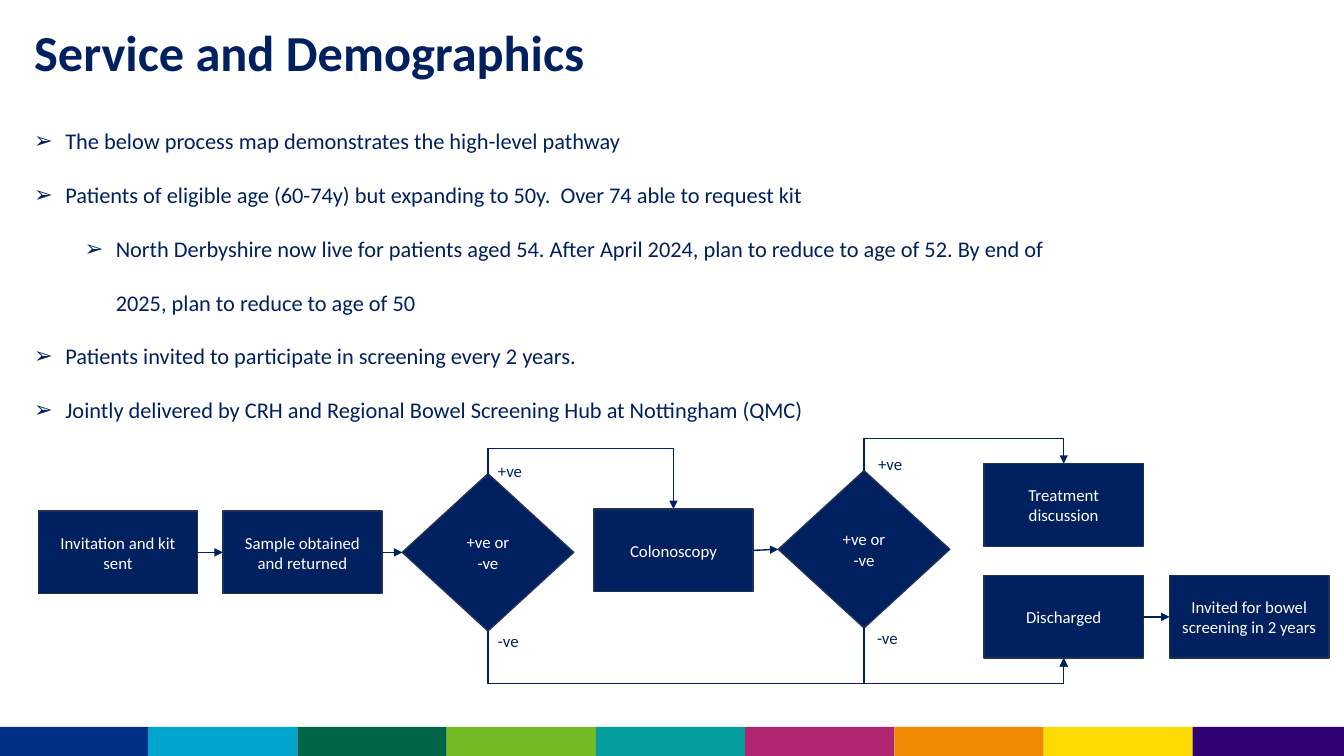
import pptx
import pptx.util
from lxml import etree
from pptx.dml.color import RGBColor
from pptx.enum.shapes import MSO_CONNECTOR, MSO_SHAPE
from pptx.enum.text import MSO_ANCHOR, PP_ALIGN
from pptx.oxml.ns import qn

Inches = pptx.util.Inches
WIDTH, HEIGHT = 13.33, 7.5
FONT = "Calibri"
NAVY = RGBColor(0x00, 0x20, 0x60)
OUTLINE = RGBColor(0x1E, 0x32, 0x56)
WHITE = RGBColor(0xFF, 0xFF, 0xFF)
BAND_COLOURS = [RGBColor.from_string(code) for code in (
    "002F87", "00A5CD", "006448", "74BA23", "049E9E",
    "B02673", "F08A03", "FEDB04", "2F0070")]
TOP, LEFT, BOTTOM, RIGHT = range(4)  # connection sites of a box or diamond

BULLETS = [
    (0, "The below process map demonstrates the high-level pathway"),
    (0, "Patients of eligible age (60-74y) but expanding to 50y.\u00a0 Over 74 able to request kit"),
    (1, "North Derbyshire now live for patients aged 54. After April 2024, plan to reduce "
        "to age of 52. By end of 2025, plan to reduce to age of 50"),
    (0, "Patients invited to participate in screening every 2 years."),
    (0, "Jointly delivered by CRH and Regional Bowel Screening Hub at Nottingham (QMC)"),
]

STEP_SIZE, DECISION_SIZE = (1.58, 0.82), (1.7, 1.56)
# name: (text, left edge, vertical centre, is a decision), within the flow region
STEPS = {
    "invite": ("Invitation and kit sent", 0, 1.13, False),
    "sample": ("Sample obtained and returned", 1.83, 1.13, False),
    "kit result": ("+ve or -ve", 3.61, 1.13, True),
    "colonoscopy": ("Colonoscopy", 5.51, 1.11, False),
    "scope result": ("+ve or -ve", 7.34, 1.1, True),
    "treatment": ("Treatment discussion", 9.38, 0.66, False),
    "discharged": ("Discharged", 9.38, 1.77, False),
    "reinvite": ("Invited for bowel screening in 2 years", 11.22, 1.77, False),
}
ARROWS = [("invite", "sample"), ("sample", "kit result"),
          ("colonoscopy", "scope result"), ("discharged", "reinvite")]
# start, end, side of both, height of the lane within the flow region
ELBOWS = [("kit result", "discharged", BOTTOM, 2.43),
          ("kit result", "colonoscopy", TOP, 0.1),
          ("scope result", "treatment", TOP, 0),
          ("scope result", "discharged", BOTTOM, 2.43)]
BRANCH_LABELS = [("+ve", 4.46, -0.03), ("+ve", 8.23, -0.1),
                 ("-ve", 8.22, 1.63), ("-ve", 4.46, 1.66)]


def format_runs(paragraph, size, colour, bold=False):
    for run in paragraph.runs:
        run.font.name = FONT
        run.font.size = pptx.util.Pt(size)
        run.font.color.rgb = colour
        run.font.bold = bold


def add_text(slide, box, text, size, bold=False, spacing=1.0, wrap=True):
    frame = slide.shapes.add_textbox(*map(Inches, box)).text_frame
    frame.word_wrap = wrap
    frame.text = text
    for paragraph in frame.paragraphs:
        paragraph.line_spacing = spacing
        format_runs(paragraph, size, NAVY, bold)
    return frame


def add_bullets(slide, box):
    frame = add_text(slide, box, "\n".join(text for _, text in BULLETS), 16, spacing=2.0)
    for paragraph, (level, _) in zip(frame.paragraphs, BULLETS):
        paragraph.level = level
        properties = paragraph._p.get_or_add_pPr()
        properties.set("marL", str(Inches(0.31 + 0.5 * level)))
        properties.set("indent", str(Inches(-0.31)))
        etree.SubElement(properties, qn("a:buFont")).set("typeface", "Arial")
        etree.SubElement(properties, qn("a:buChar")).set("char", "➢")


def add_colour_strip(slide, box):
    left, top, width, height = box
    edges = [left] + [left + 1.47 + 1.48 * i for i in range(8)] + [left + width]
    for colour, start, end in zip(BAND_COLOURS, edges, edges[1:]):
        band = slide.shapes.add_shape(MSO_SHAPE.RECTANGLE,
                                      *map(Inches, (start, top, end - start, height)))
        band.shadow.inherit = False
        band.fill.solid()
        band.fill.fore_color.rgb = colour
        band.line.fill.background()


def add_step(slide, left, middle, text, is_decision):
    width, height = DECISION_SIZE if is_decision else STEP_SIZE
    kind = MSO_SHAPE.DIAMOND if is_decision else MSO_SHAPE.RECTANGLE
    step = slide.shapes.add_shape(
        kind, *map(Inches, (left, middle - height / 2, width, height)))
    step.shadow.inherit = False
    step.fill.solid()
    step.fill.fore_color.rgb = NAVY
    step.line.color.rgb = OUTLINE
    step.line.width = pptx.util.Pt(1)
    frame = step.text_frame
    frame.word_wrap = True
    frame.vertical_anchor = MSO_ANCHOR.MIDDLE
    frame.text = text
    frame.paragraphs[0].alignment = PP_ALIGN.CENTER
    format_runs(frame.paragraphs[0], 12, WHITE)
    return step


def add_arrow(slide, kind, start, start_site, end, end_site):
    arrow = slide.shapes.add_connector(kind, 0, 0, 0, 0)
    arrow.begin_connect(start, start_site)
    arrow.end_connect(end, end_site)
    arrow.line.color.rgb = NAVY
    arrow.line.width = pptx.util.Pt(1)
    etree.SubElement(arrow.line._get_or_add_ln(), qn("a:tailEnd")).set("type", "triangle")
    etree.SubElement(arrow.element.spPr, qn("a:effectLst"))
    return arrow


def add_elbow(slide, start, end, side, lane):
    """Join the same side of two steps by way of a horizontal lane."""
    arrow = add_arrow(slide, MSO_CONNECTOR.ELBOW, start, side, end, side)
    x1, y1, x2, y2 = arrow.begin_x, arrow.begin_y, arrow.end_x, arrow.end_y
    rise, run = abs(y2 - y1), abs(x2 - x1)
    arrow.left, arrow.top = (x1 + x2 - rise) // 2, (y1 + y2 - run) // 2
    arrow.width, arrow.height = rise, run
    upward = y2 < y1
    frame = arrow.element.spPr.find(qn("a:xfrm"))
    frame.set("rot", str((90 if upward else 270) * 60000))
    frame.set("flipH", "1")
    frame.set("flipV", "1" if upward else "0")
    adjustments = arrow.element.spPr.find(qn("a:prstGeom")).get_or_add_avLst()
    guide = etree.SubElement(adjustments, qn("a:gd"))
    guide.set("name", "adj1")
    guide.set("fmla", f"val {round((Inches(lane) - y1) / (y2 - y1) * 100000)}")


def add_flow(slide, box):
    left, top = box[:2]
    steps = {name: add_step(slide, left + x, top + middle, text, is_decision)
             for name, (text, x, middle, is_decision) in STEPS.items()}
    for start, end, side, lane in ELBOWS:
        add_elbow(slide, steps[start], steps[end], side, top + lane)
    for start, end in ARROWS:
        add_arrow(slide, MSO_CONNECTOR.STRAIGHT, steps[start], RIGHT, steps[end], LEFT)
    for text, x, y in BRANCH_LABELS:
        add_text(slide, (left + x, top + y, 0.48, 0.45), text, 12, spacing=2.0, wrap=False)


def main():
    presentation = pptx.Presentation()
    presentation.slide_width, presentation.slide_height = Inches(WIDTH), Inches(HEIGHT)
    slide = presentation.slides.add_slide(presentation.slide_layouts[6])
    add_colour_strip(slide, (0, 7.21, WIDTH, HEIGHT - 7.21))
    add_text(slide, (0.24, 0.16, 5.87, 0.71), "Service and Demographics", 36, bold=True)
    add_bullets(slide, (0.24, 0.95, 10.48, 3.87))
    add_flow(slide, (0.38, 4.35, 12.8, 2.43))
    presentation.save("out.pptx")


if __name__ == "__main__":
    main()
